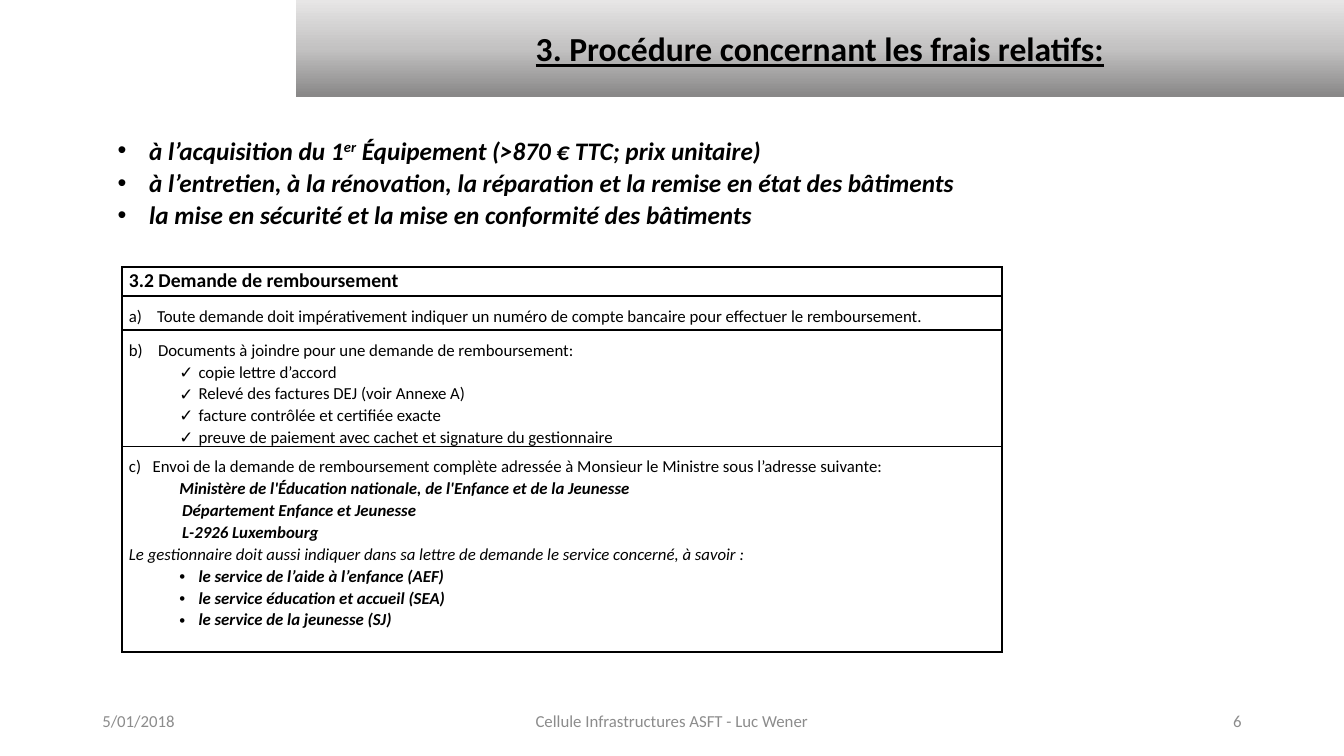
from pptx import Presentation
from pptx.dml.color import RGBColor
from pptx.enum.shapes import MSO_SHAPE as Shape
from pptx.enum.text import MSO_ANCHOR as Anchor, PP_ALIGN as Align
from pptx.oxml.ns import qn
from pptx.util import Pt
from lxml.etree import SubElement

FONT = "Calibri"
BLACK, GREY = "000000", "8C8C8C"
TITLE_STOPS = [(1, "898888"), (50, "C3C2C2"), (100, "E7E6E6")]
TOPICS = [
    [("à l’acquisition du 1", 0), ("er", 30), (" Équipement (>870 € TTC; prix unitaire)", 0)],
    [("à l’entretien, à la rénovation, la réparation et la remise en état des bâtiments", 0)],
    [("la mise en sécurité et la mise en conformité des bâtiments", 0)],
]
HEADING = dict(size=14, bold=True)
STRONG = dict(bold=True, italic=True)
CHECK = dict(margin=49.7, hang=13.7, bullet="✓")
SERVICE = dict(margin=49.7, hang=13.7, bullet="•", **STRONG)


def step(hang):
    """Return the style of a lettered step whose text starts after the hang."""
    return dict(spacing=1.5, margin=hang, hang=hang)


ROWS = [
    (20.9, [("3.2 Demande de remboursement", HEADING)]),
    (24, [("a)\tToute demande doit impérativement indiquer un numéro de compte bancaire "
           "pour effectuer le remboursement.", step(20.2))]),
    (83, [
        ("b)\tDocuments à joindre pour une demande de remboursement:", step(20.8)),
        ("copie lettre d’accord", CHECK),
        ("Relevé des factures DEJ (voir Annexe A)", CHECK),
        ("facture contrôlée et certifiée exacte", CHECK),
        ("preuve de paiement avec cachet et signature du gestionnaire", CHECK),
    ]),
    (147, [
        ("c)\tEnvoi de la demande de remboursement complète adressée à Monsieur le Ministre "
         "sous l’adresse suivante:", step(17)),
        ("Ministère de l'Éducation nationale, de l'Enfance et de la Jeunesse",
         dict(margin=36, **STRONG)),
        ("Département Enfance et Jeunesse", dict(margin=38, **STRONG)),
        ("L-2926 Luxembourg", dict(margin=38, **STRONG)),
        ("Le gestionnaire doit aussi indiquer dans sa lettre de demande le service concerné, "
         "à savoir :", dict(italic=True)),
        ("le service de l’aide à l’enfance (AEF)", SERVICE),
        ("le service éducation et accueil (SEA)", SERVICE),
        ("le service de la jeunesse (SJ)", SERVICE),
    ]),
]


def color(value):
    """Turn a hex string into a colour."""
    return RGBColor.from_string(value)


def paragraphs(frame):
    """Yield the first paragraph of a frame, then new ones without end."""
    yield frame.paragraphs[0]
    while True:
        yield frame.add_paragraph()


def style(para, size=12, bold=False, italic=False, underline=False, ink=BLACK,
          align=Align.LEFT, spacing=1.07, margin=0, hang=0, bullet=None):
    """Set the layout, bullet and font of a paragraph."""
    para.alignment = align
    para.line_spacing = spacing
    props = para._p.get_or_add_pPr()
    props.set("marL", str(Pt(margin)))
    props.set("indent", str(-Pt(hang)))
    if bullet:
        SubElement(props, qn("a:buFont"), typeface="Arial")
        SubElement(props, qn("a:buChar"), char=bullet)
    else:
        SubElement(props, qn("a:buNone"))
        if hang:
            tabs = SubElement(props, qn("a:tabLst"))
            SubElement(tabs, qn("a:tab"), pos=str(Pt(margin)), algn="l")
    font = para.font
    font.name, font.size = FONT, Pt(size)
    font.bold, font.italic, font.underline = bold, italic, underline
    font.color.rgb = color(ink)


def add_title(page, left, top, width, height):
    """Draw the shaded title band."""
    band = page.shapes.add_shape(Shape.RECTANGLE, Pt(left), Pt(top), Pt(width), Pt(height))
    band.shadow.inherit = False
    band.line.fill.background()
    band.fill.gradient()
    band.fill.gradient_angle = 90
    stops = band._element.spPr.find(qn("a:gradFill")).find(qn("a:gsLst"))
    for old in list(stops):
        stops.remove(old)
    for position, shade in TITLE_STOPS:
        stop = SubElement(stops, qn("a:gs"), pos=str(position * 1000))
        SubElement(stop, qn("a:srgbClr"), val=shade)
    frame = band.text_frame
    frame.word_wrap = True
    frame.vertical_anchor = Anchor.MIDDLE
    para = frame.paragraphs[0]
    para.text = "3. Procédure concernant les frais relatifs:"
    style(para, 24, bold=True, underline=True, align=Align.CENTER, spacing=1.0)


def add_topics(page, left, top, width, height):
    """Write the bulleted list of cost types."""
    box = page.shapes.add_textbox(Pt(left), Pt(top), Pt(width), Pt(height))
    box.text_frame.word_wrap = True
    for para, pieces in zip(paragraphs(box.text_frame), TOPICS):
        style(para, 18, margin=22.5, hang=22.5, bullet="•", **STRONG)
        for words, raised in pieces:
            span = para.add_run()
            span.text = words
            if raised:
                span._r.get_or_add_rPr().set("baseline", str(raised * 1000))
    para.space_after = Pt(8)


def add_border(cell):
    """Draw a black line on each side of a cell."""
    props = cell._tc.get_or_add_tcPr()
    for index, side in enumerate("LRTB"):
        line = props.makeelement(qn(f"a:ln{side}"), {"w": str(Pt(1.5))})
        fill = SubElement(line, qn("a:solidFill"))
        SubElement(fill, qn("a:srgbClr"), val=BLACK)
        props.insert(index, line)


def add_procedure(page, left, top, width):
    """Build the one-column table of refund steps."""
    height = sum(row_height for row_height, _ in ROWS)
    table = page.shapes.add_table(len(ROWS), 1, Pt(left), Pt(top), Pt(width), Pt(height)).table
    table.first_row = table.horz_banding = False
    for row, (row_height, lines) in zip(table.rows, ROWS):
        row.height = Pt(row_height)
        cell = row.cells[0]
        cell.fill.background()
        cell.margin_left = cell.margin_right = Pt(5)
        cell.margin_top = cell.margin_bottom = 0
        add_border(cell)
        for (words, look), para in zip(lines, paragraphs(cell.text_frame)):
            para.text = words
            style(para, **look)


def add_footer(page, left, top, width, height):
    """Place the date, author and page number along the bottom."""
    side, middle = 216, 324
    parts = [
        ("5/01/2018", left, side, Align.LEFT),
        ("Cellule Infrastructures ASFT - Luc Wener", left + (width - middle) / 2, middle, Align.CENTER),
        ("6", left + width - side, side, Align.RIGHT),
    ]
    for words, start, span_width, align in parts:
        box = page.shapes.add_textbox(Pt(start), Pt(top), Pt(span_width), Pt(height))
        frame = box.text_frame
        frame.word_wrap = True
        frame.vertical_anchor = Anchor.MIDDLE
        frame.paragraphs[0].text = words
        style(frame.paragraphs[0], ink=GREY, align=align, spacing=1.0)


def main():
    """Build the slide and save it."""
    deck = Presentation()
    deck.slide_width, deck.slide_height = Pt(960), Pt(540)
    page = deck.slides.add_slide(deck.slide_layouts[6])
    add_title(page, 211.2, 0, 748.8, 69.1)
    add_topics(page, 77, 91.4, 638.6, 77)
    add_procedure(page, 87.1, 190.8, 628.6)
    add_footer(page, 66, 500.4, 828, 28.8)
    deck.save("out.pptx")


if __name__ == "__main__":
    main()
